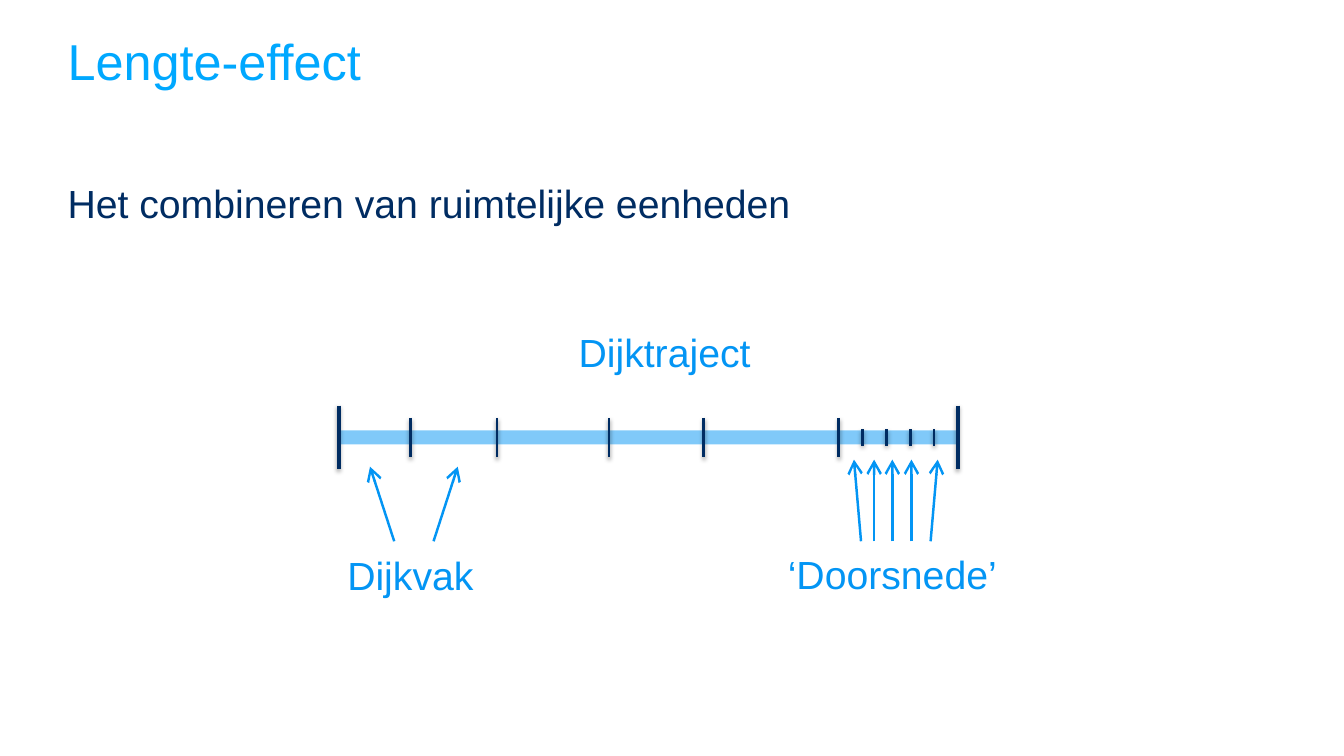
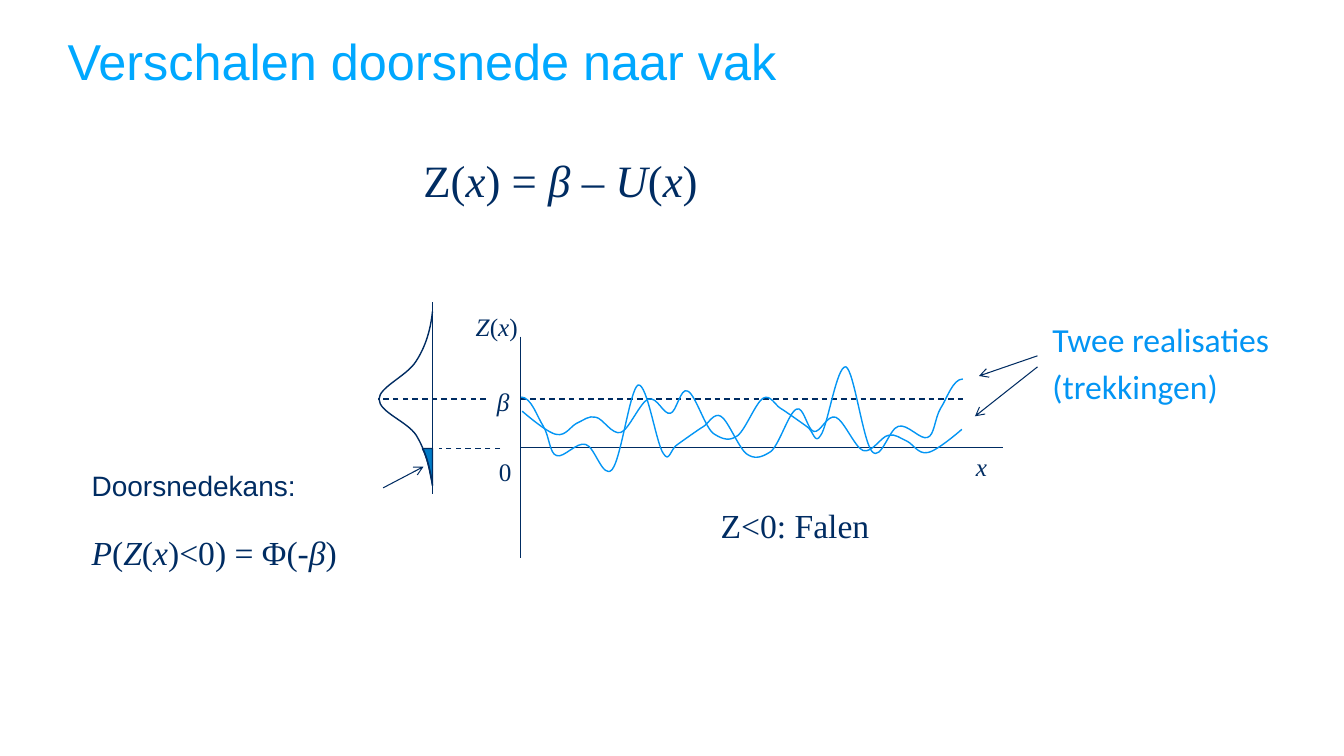
"""Build two slides on the length effect in dike reliability."""
from pptx import Presentation
from pptx.dml.color import RGBColor
from pptx.enum.dml import MSO_LINE
from pptx.enum.shapes import MSO_CONNECTOR
from pptx.enum.text import MSO_ANCHOR, PP_ALIGN
from pptx.oxml import parse_xml
from pptx.oxml.ns import nsdecls, qn
from pptx.util import Inches, Pt

NAVY, BLUE, SKY, TEAL = "002C62", "0395F4", "00A8FF", "007BC7"
SERIF = "Times New Roman"
BODY = dict(size=28, color=NAVY, margin=0)
LABEL = dict(size=28, color=BLUE)
CENTERED = dict(LABEL, align=PP_ALIGN.CENTER)
MATH = dict(size=18, color=NAVY, font=SERIF, spacing=1.15)
MATH_LARGE = dict(MATH, size=24)
POINTER = dict(color=NAVY, width=0.75, arrow="med")
THIN = dict(color=NAVY, width=1)
DASHED = dict(THIN, dash=True)

SECTION_TEXTS = [
    ("Het combineren van ruimtelijke eenheden", (0.67, 1.78, 12, 4.2), BODY),
    ("Dijktraject", (5.64, 3.21, 2.28, 0.57), LABEL),
    ("Dijkvak", (2.93, 5.42, 2.28, 0.57), CENTERED),
    ("‘Doorsnede’", (7.12, 5.41, 3.46, 0.57), CENTERED),
]
DIKE_LEFT, DIKE_RIGHT, DIKE_Y = 3.36, 9.5, 4.34
LAST_SECTION = 8.32
CROSS_SECTION_COUNT = 5
CROSS_SECTION_WIDTH = (DIKE_RIGHT - LAST_SECTION) / CROSS_SECTION_COUNT
TICKS = [
    (0.63, 2.5, [DIKE_LEFT, DIKE_RIGHT]),
    (0.39, 2, [4.07, 4.93, 6.04, 6.98, LAST_SECTION]),
    (0.16, 2, [LAST_SECTION + CROSS_SECTION_WIDTH * i for i in range(1, CROSS_SECTION_COUNT)]),
]
ARROW_GROUPS = [
    (5.37, 4.63, [(3.91, 3.67), (4.3, 4.54)]),
    (5.37, 4.56, [(8.54, 8.47), (8.67, 8.67), (8.85, 8.85), (9.04, 9.04), (9.23, 9.3)]),
]

SCALING_TEXTS = [
    ("Doorsnedekans:", (0.81, 4.6, 2.88, 0.44), dict(size=20, color=NAVY)),
    ("*x*", (9.58, 4.43, 0.46, 0.4), dict(MATH, spacing=1)),
    ("*Z*(*x*)", (4.62, 2.99, 0.75, 0.47), MATH),
    ("0", (4.85, 4.43, 0.62, 0.47), MATH),
    ("*β*", (4.83, 3.74, 0.35, 0.37), MATH),
    ("Z<0: Falen", (7.05, 4.9, 2.96, 0.47), MATH_LARGE),
    ("Z(*x*) = *β – U*(*x*)", (4.1, 1.39, 4.5, 1.02), dict(MATH, size=32)),
    ("*P*(*Z*(*x*)<0) = Φ(-*β*)", (0.81, 5.17, 2.88, 1.51), MATH_LARGE),
    ("Twee realisaties (trekkingen)", (10.34, 3.06, 2.96, 0.47),
     dict(MATH_LARGE, color=BLUE, font="Calibri")),
]
SCALING_LINES = [
    ((5.16, 3.34), (5.16, 5.54), THIN),
    ((5.16, 4.44), (9.95, 4.44), THIN),
    ((4.29, 3), (4.29, 4.9), THIN),
    ((5.16, 3.96), (9.58, 3.96), DASHED),
    ((4.82, 3.96), (3.75, 3.96), DASHED),
    ((4.96, 4.45), (4.35, 4.45), DASHED),
    ((10.29, 3.53), (9.71, 3.73), POINTER),
    ((10.29, 3.64), (9.67, 4.13), POINTER),
    ((3.8, 4.84), (4.2, 4.63), POINTER),
]
REALISATION = [
    (5.17, 3.94),
    (5.27, 3.94), (5.33, 4.14), (5.39, 4.23), (5.45, 4.33), (5.45, 4.5), (5.52, 4.52),
    (5.59, 4.55), (5.72, 4.38), (5.81, 4.41), (5.9, 4.43), (5.98, 4.76), (6.07, 4.66),
    (6.16, 4.56), (6.25, 3.85), (6.33, 3.82), (6.42, 3.8), (6.51, 4.41), (6.58, 4.5),
    (6.64, 4.6), (6.65, 4.45), (6.72, 4.41), (6.79, 4.36), (6.93, 4.26), (6.98, 4.23),
    (7.03, 4.2), (7.08, 4.09), (7.15, 4.13), (7.22, 4.17), (7.32, 4.43), (7.4, 4.5),
    (7.48, 4.56), (7.55, 4.54), (7.63, 4.49), (7.72, 4.45), (7.82, 4.09), (7.9, 4.06),
    (7.97, 4.02), (8.01, 4.27), (8.07, 4.28), (8.14, 4.3), (8.2, 4.11), (8.29, 4.14),
    (8.37, 4.17), (8.48, 4.44), (8.56, 4.47), (8.65, 4.5), (8.74, 4.33), (8.81, 4.32),
    (8.88, 4.3), (8.93, 4.35), (9, 4.38), (9.06, 4.41), (9.11, 4.51), (9.2, 4.49),
    (9.29, 4.48), (9.54, 4.26), (9.54, 4.26),
]
MIRRORED_REALISATION = [(14.72 - x, y - 0.18) for x, y in REALISATION]
DENSITY = [
    (4.29, 4.82),
    (4.27, 4.65), (4.22, 4.47), (4.13, 4.32), (4.04, 4.18), (3.76, 4.09), (3.76, 3.96),
    (3.76, 3.84), (4.04, 3.73), (4.13, 3.58), (4.22, 3.44), (4.27, 3.28), (4.29, 3.09),
]
FAILURE_TAIL = [(4.19, 4.45), (4.25, 4.57), (4.26, 4.68), (4.29, 4.81), (4.29, 4.45)]


def rgb(color):
    return RGBColor.from_string(color)


def write_text(shape, text, size, color, font="Arial", margin=None, align=PP_ALIGN.LEFT, spacing=1):
    frame = shape.text_frame
    settings = dict(word_wrap=True, vertical_anchor=MSO_ANCHOR.TOP)
    if margin is not None:
        settings.update({f"margin_{side}": Inches(margin) for side in ("left", "top", "right", "bottom")})
    for name, value in settings.items():
        setattr(frame, name, value)
    paragraph = frame.paragraphs[0]
    paragraph.alignment, paragraph.line_spacing = align, float(spacing)
    for index, part in enumerate(text.split("*")):
        if part:
            run = paragraph.add_run()
            run.text = part
            for name, value in dict(name=font, size=Pt(size), italic=index % 2 == 1).items():
                setattr(run.font, name, value)
            run.font.color.rgb = rgb(color)


def add_titled_slide(presentation, title, texts):
    slide = presentation.slides.add_slide(presentation.slide_layouts[5])
    shape = slide.shapes.title
    for name, value in dict(left=0.67, top=0.3, width=12, height=1.25).items():
        setattr(shape, name, Inches(value))
    write_text(shape, title, 36, SKY, margin=0)
    for text, box, style in texts:
        write_text(slide.shapes.add_textbox(*map(Inches, box)), text, **style)
    return slide


def add_line(slide, start, end, color, width, dash=False, arrow=None, shadow=False, alpha=None):
    connector = slide.shapes.add_connector(MSO_CONNECTOR.STRAIGHT, *map(Inches, (*start, *end)))
    connector.line.color.rgb, connector.line.width = rgb(color), Pt(width)
    if dash:
        connector.line.dash_style = MSO_LINE.DASH
    properties = connector._element.spPr
    line = properties.find(qn("a:ln"))
    if alpha:
        line.find(".//" + qn("a:srgbClr")).append(
            parse_xml(f'<a:alpha {nsdecls("a")} val="{alpha * 1000}"/>'))
    if arrow:
        line.append(parse_xml(f'<a:tailEnd {nsdecls("a")} type="arrow" w="{arrow}" len="{arrow}"/>'))
    effect = (f'<a:outerShdw blurRad="{Pt(3.1)}" dist="{Pt(1.6)}" dir="5400000" rotWithShape="0">'
              '<a:srgbClr val="000000"><a:alpha val="38000"/></a:srgbClr></a:outerShdw>') if shadow else ""
    properties.append(parse_xml(f'<a:effectLst {nsdecls("a")}>{effect}</a:effectLst>'))


def bend_segments(shape):
    """Turn each full triple of line segments into one cubic Bézier segment."""
    segments = list(shape._element.iter(qn("a:lnTo")))
    for triple in zip(segments[::3], segments[1::3], segments[2::3]):
        curve = parse_xml(f'<a:cubicBezTo {nsdecls("a")}/>')
        triple[0].addprevious(curve)
        for segment in triple:
            curve.append(segment[0])
            segment.getparent().remove(segment)


def add_curve(slide, points, color, fill=None):
    vertices = [tuple(map(Inches, point)) for point in points]
    builder = slide.shapes.build_freeform(*vertices[0])
    builder.add_line_segments(vertices[1:], close=fill is not None)
    shape = builder.convert_to_shape()
    bend_segments(shape)
    shape.shadow.inherit = False
    shape.line.color.rgb, shape.line.width = rgb(color), Pt(1)
    if fill:
        shape.fill.solid()
        shape.fill.fore_color.rgb = rgb(fill)
    else:
        shape.fill.background()


def build_section_slide(presentation):
    slide = add_titled_slide(presentation, "Lengte-effect", SECTION_TEXTS)
    add_line(slide, (DIKE_LEFT, DIKE_Y), (DIKE_RIGHT, DIKE_Y), BLUE, 10, alpha=50)
    for height, width, positions in TICKS:
        for x in positions:
            add_line(slide, (x, DIKE_Y - height / 2), (x, DIKE_Y + height / 2), NAVY, width, shadow=True)
    for base, tip, arrows in ARROW_GROUPS:
        for base_x, tip_x in arrows:
            add_line(slide, (base_x, base), (tip_x, tip), BLUE, 1.75, arrow="lg")


def build_scaling_slide(presentation):
    slide = add_titled_slide(presentation, "Verschalen doorsnede naar vak", SCALING_TEXTS)
    add_curve(slide, FAILURE_TAIL, NAVY, TEAL)
    for start, end, style in SCALING_LINES:
        add_line(slide, start, end, **style)
    for curve, color in ((DENSITY, NAVY), (REALISATION, BLUE), (MIRRORED_REALISATION, BLUE)):
        add_curve(slide, curve, color)


def main():
    presentation = Presentation()
    presentation.slide_width, presentation.slide_height = Inches(13.33), Inches(7.5)
    build_section_slide(presentation)
    build_scaling_slide(presentation)
    presentation.save("out.pptx")


if __name__ == "__main__":
    main()
